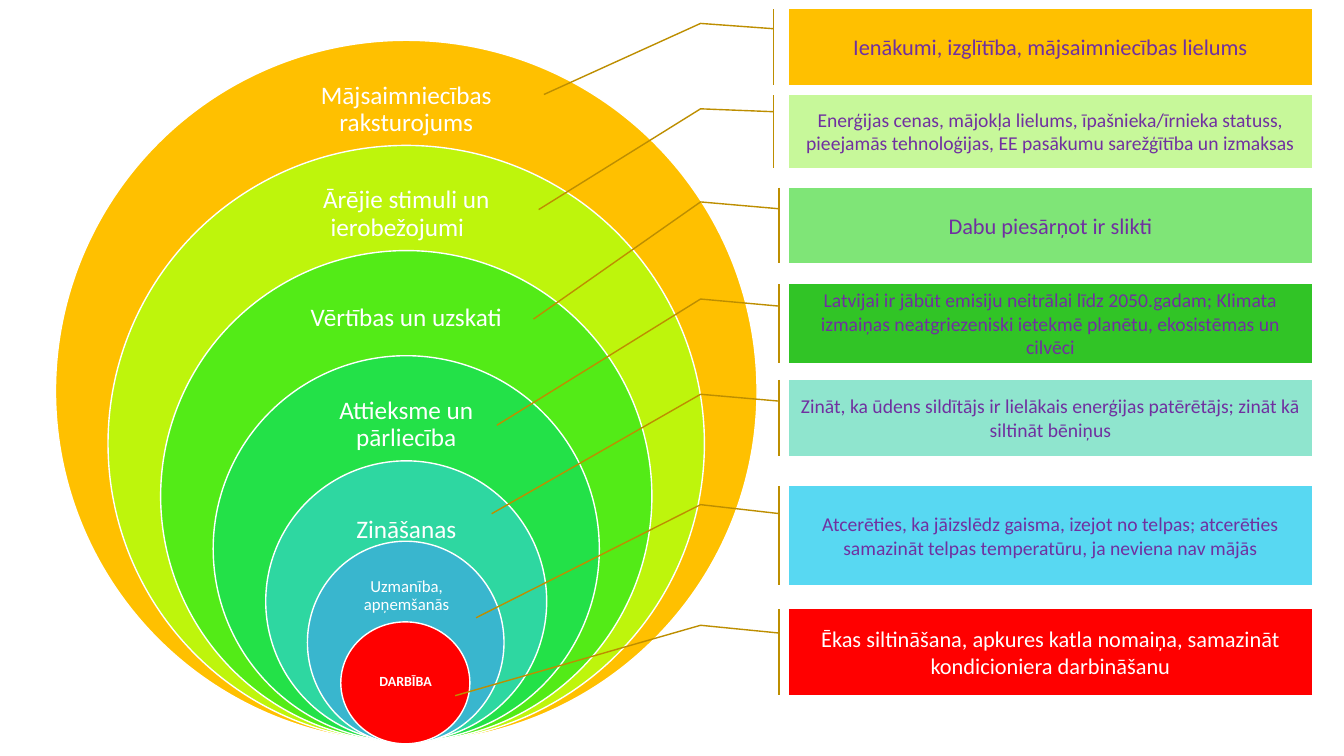
import pptx
import pptx.dml.color
import pptx.enum.shapes
import pptx.enum.text
import pptx.util

Pt = pptx.util.Pt
SHAPES = pptx.enum.shapes.MSO_SHAPE

COLOURS = {
    "white": "FFFFFF", "purple": "7030A0", "bronze": "BD8E00",
    "amber": "FFC000", "lime": "BEF50C", "grass": "53EB17",
    "green": "23E148", "mint": "2ED7A1", "teal": "39B6CE", "red": "FF0000",
    "pale lime": "C7F89A", "pale green": "7FE577", "leaf": "31C426",
    "pale mint": "8FE5CE", "sky": "58D8F2",
}

CENTRE = 290.2
RING_TOP, RING_SIZE, RING_STEP = 28.8, 501.1, 75.1
LABEL_DROP = 24.6

# Label, colour, label width and height
OUTER_RINGS = [
    ("Mājsaimniecības raksturojums", "amber", 187.9, 50.4),
    ("Ārējie stimuli un ierobežojumi\t", "lime", 183.6, 49),
    ("Vērtības un uzskati", "grass", 181.4, 48.2),
    ("Attieksme un pārliecība", "green", 149, 49.7),
    ("Zināšanas", "mint", 130.3, 50.4),
]

# Label, colour, ring box, label box, text size, inset, bold
INNER_RINGS = [
    ("Uzmanība, apņemšanās", "teal", (219.6, 386.6, 140.4, 144.7),
     (242.6, 408.2, 95.8, 35.3), 12, 6.5, False),
    ("DARBĪBA", "red", (243.4, 444.2, 92.2, 87.1),
     (257, 465.8, 65.5, 43.2), 10, 5.8, True),
]

CALLOUT_LEFT, CALLOUT_WIDTH = 563.8, 373
# Text, fill, text colour, text size, top, height, bar (y, x), pointer end (y, x)
CALLOUTS = [
    ("Ienākumi, izglītība, mājsaimniecības lielums",
     "amber", "purple", 16, 6.5, 54, (0.26, -0.03), (1.13, -0.47)),
    ("Enerģijas cenas, mājokļa lielums, īpašnieka/īrnieka statuss, "
     "pieejamās tehnoloģijas, EE pasākumu sarežģītība un izmaksas",
     "pale lime", "purple", 14, 67.9, 51.8, (0.23, -0.03), (1.58, -0.48)),
    ("Dabu piesārņot ir slikti",
     "pale green", "purple", 16, 134, 54, (0.28, -0.02), (1.74, -0.49)),
    ("Latvijai ir jābūt emisiju neitrālai līdz 2050.gadam; Klimata izmaiņas "
     "neatgriezeniski ietekmē planētu, ekosistēmas un cilvēci",
     "leaf", "purple", 14, 203, 56, (0.28, -0.02), (1.8, -0.56)),
    ("Zināt, ka ūdens sildītājs ir lielākais enerģijas patērētājs; "
     "zināt kā siltināt bēniņus",
     "pale mint", "purple", 14, 271.4, 54, (0.28, -0.02), (1.77, -0.57)),
    ("Atcerēties, ka jāizslēdz gaisma, izejot no telpas; atcerēties samazināt "
     "telpas temperatūru, ja neviena nav mājās",
     "sky", "purple", 14, 347, 70.9, (0.28, -0.02), (1.33, -0.6)),
    ("Ēkas siltināšana, apkures katla nomaiņa, samazināt kondicioniera "
     "darbināšanu",
     "red", "white", 16, 435, 61.3, (0.28, -0.02), (1.01, -0.64)),
]


class SlideBuilder:
    def __init__(self, slide, font="Calibri"):
        self.slide = slide
        self.font = font

    def colour(self, name):
        return pptx.dml.color.RGBColor.from_string(COLOURS[name])

    def outlined(self, kind, box, fill, line):
        """Add a preset shape with a solid fill and a one-point outline."""
        figure = self.slide.shapes.add_shape(kind, *map(Pt, box))
        figure.shadow.inherit = False
        figure.fill.solid()
        figure.fill.fore_color.rgb = self.colour(fill)
        figure.line.color.rgb = self.colour(line)
        figure.line.width = Pt(1)
        return figure

    def centred_text(self, frame, text, size, colour, bold=False):
        frame.text = text
        frame.word_wrap = True
        frame.vertical_anchor = pptx.enum.text.MSO_ANCHOR.MIDDLE
        paragraph = frame.paragraphs[0]
        paragraph.alignment = pptx.enum.text.PP_ALIGN.CENTER
        for run in paragraph.runs:
            run.font.name = self.font
            run.font.size = Pt(size)
            run.font.bold = bold
            run.font.color.rgb = self.colour(colour)
        return paragraph

    def ring(self, box, fill):
        self.outlined(SHAPES.OVAL, box, fill, "white")

    def label(self, text, box, size, inset, bold=False):
        frame = self.slide.shapes.add_textbox(*map(Pt, box)).text_frame
        frame.margin_left = frame.margin_right = Pt(inset)
        frame.margin_top = frame.margin_bottom = Pt(inset)
        paragraph = self.centred_text(frame, text, size, "white", bold)
        paragraph.line_spacing = 0.9

    def callout(self, text, box, fill, colour, size, bar, end):
        """Add a box with an accent bar and a pointer bent at a shared elbow."""
        elbow = (0.19, -0.17)
        note = self.outlined(SHAPES.LINE_CALLOUT_2_ACCENT_BAR, box, fill, "bronze")
        for index, value in enumerate(bar + elbow + end):
            note.adjustments[index] = value
        self.centred_text(note.text_frame, text, size, colour)


def main():
    deck = pptx.Presentation()
    deck.slide_width, deck.slide_height = Pt(960), Pt(540)
    builder = SlideBuilder(deck.slides.add_slide(deck.slide_layouts[6]))

    for index, (text, fill, width, height) in enumerate(OUTER_RINGS):
        size = RING_SIZE - index * RING_STEP
        top = RING_TOP + index * RING_STEP
        builder.ring((CENTRE - size / 2, top, size, size), fill)
        label_box = (CENTRE - width / 2, top + LABEL_DROP, width, height)
        builder.label(text, label_box, 18, 10)

    for text, fill, ring_box, label_box, size, inset, bold in INNER_RINGS:
        builder.ring(ring_box, fill)
        builder.label(text, label_box, size, inset, bold)

    for text, fill, colour, size, top, height, bar, end in CALLOUTS:
        box = (CALLOUT_LEFT, top, CALLOUT_WIDTH, height)
        builder.callout(text, box, fill, colour, size, bar, end)

    deck.save("out.pptx")


if __name__ == "__main__":
    main()
